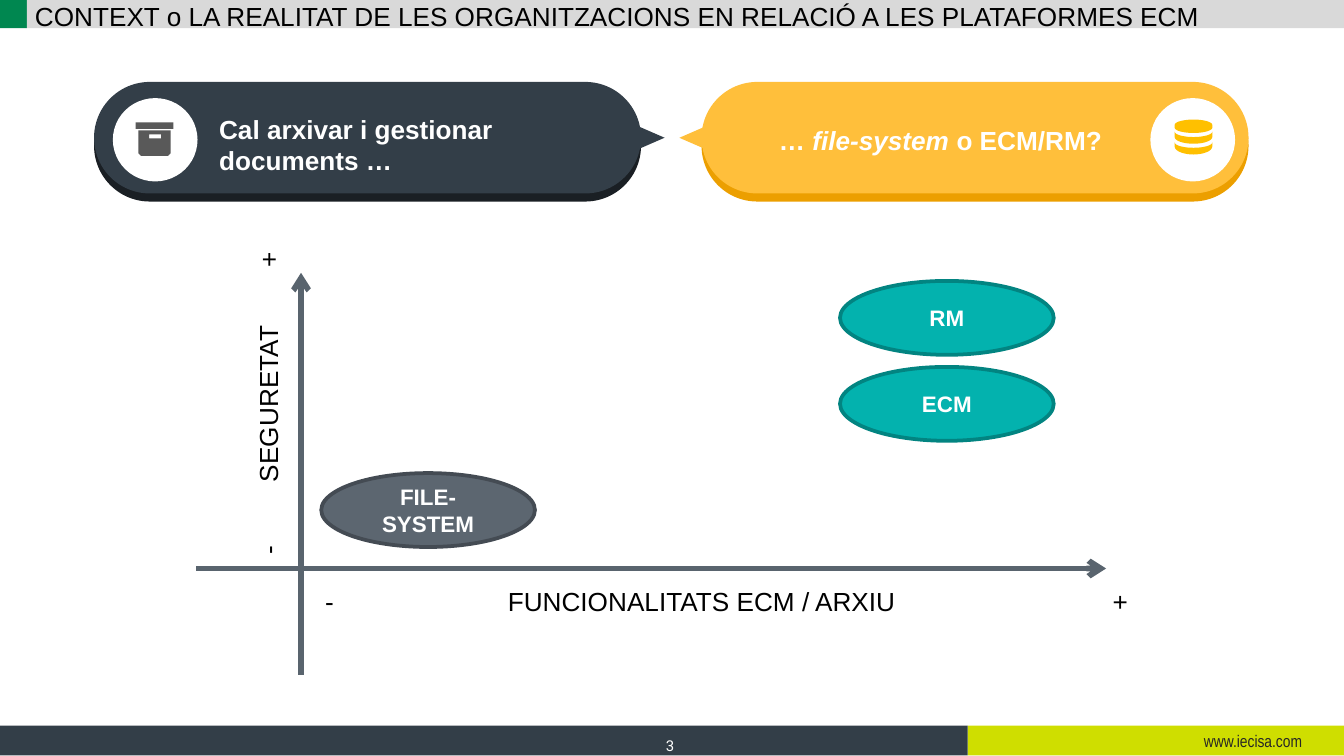
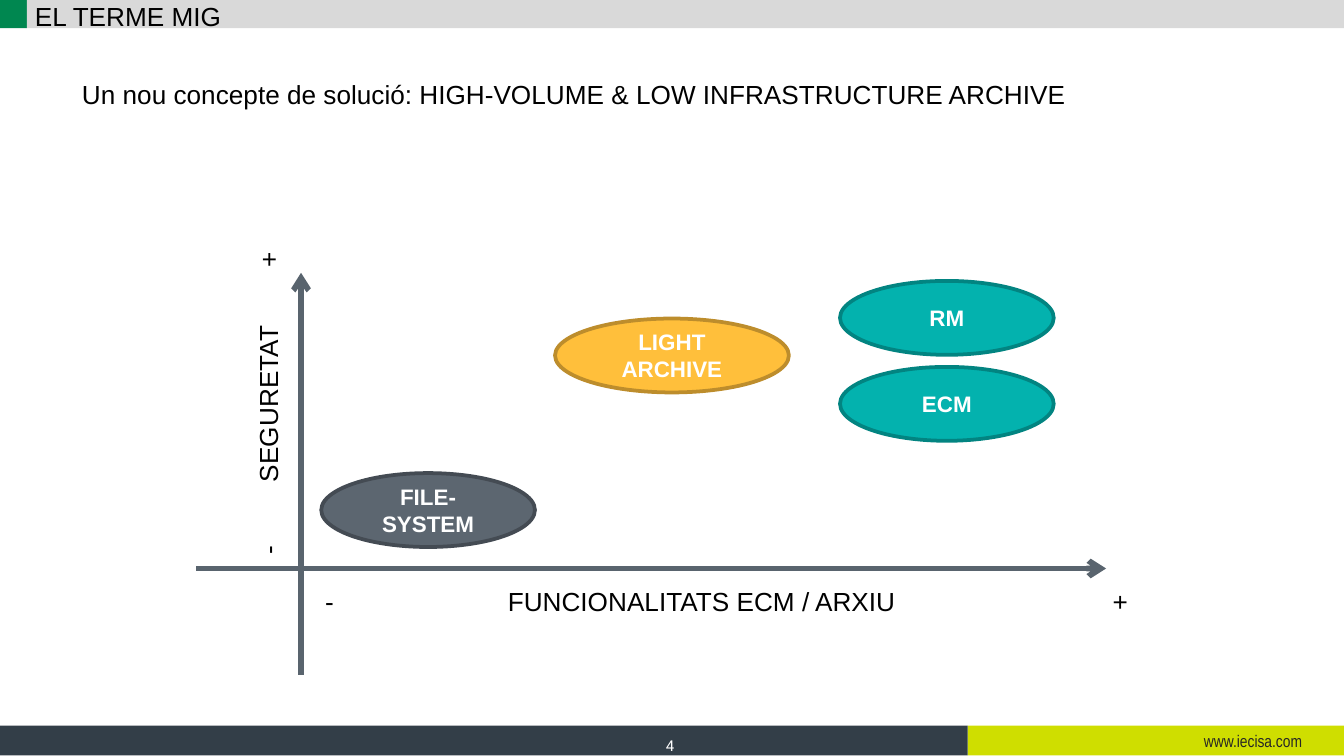
import math

from lxml import etree
from pptx import Presentation
from pptx.dml.color import RGBColor
from pptx.enum.shapes import MSO_CONNECTOR, MSO_SHAPE
from pptx.enum.text import MSO_ANCHOR, MSO_AUTO_SIZE, PP_ALIGN
from pptx.oxml.ns import qn
from pptx.util import Inches, Pt

RECTANGLE = MSO_SHAPE.RECTANGLE
ROUNDED = MSO_SHAPE.ROUNDED_RECTANGLE
ELLIPSE = MSO_SHAPE.OVAL
TRIANGLE = MSO_SHAPE.ISOSCELES_TRIANGLE
STRAIGHT = MSO_CONNECTOR.STRAIGHT
TOP, MIDDLE = MSO_ANCHOR.TOP, MSO_ANCHOR.MIDDLE
LEFT, CENTER, RIGHT = PP_ALIGN.LEFT, PP_ALIGN.CENTER, PP_ALIGN.RIGHT
NO_FIT = MSO_AUTO_SIZE.NONE

BLACK = RGBColor(0x00, 0x00, 0x00)
WHITE = RGBColor(0xFF, 0xFF, 0xFF)
LIME = RGBColor(0xCF, 0xDE, 0x00)
NAVY = RGBColor(0x33, 0x3E, 0x48)
NAVY_SHADE = RGBColor(0x1A, 0x1F, 0x24)
GREEN = RGBColor(0x00, 0x87, 0x50)
LIGHT_GRAY = RGBColor(0xD9, 0xD9, 0xD9)
INK = RGBColor(0x26, 0x26, 0x26)
AXIS_GRAY = RGBColor(0x59, 0x64, 0x6E)
SLATE = RGBColor(0x5C, 0x66, 0x70)
SLATE_EDGE = RGBColor(0x44, 0x4B, 0x53)
TEAL = RGBColor(0x03, 0xB2, 0xAE)
TEAL_EDGE = RGBColor(0x02, 0x84, 0x81)
AMBER = RGBColor(0xFF, 0xBF, 0x3B)
AMBER_EDGE = RGBColor(0xBD, 0x8D, 0x2C)
AMBER_SHADE = RGBColor(0xEC, 0x9F, 0x00)
ARCHIVE_GRAY = RGBColor(0x59, 0x59, 0x59)
DATABASE_GOLD = RGBColor(0xFF, 0xC0, 0x00)


def place(shape, left, top, width, height):
    shape.left, shape.top = Inches(left), Inches(top)
    shape.width, shape.height = Inches(width), Inches(height)


def write(shape, spans, size=14, color=BLACK, bold=False, align=LEFT,
          anchor=TOP, font="Arial", wrap=True, tabs=()):
    frame = shape.text_frame
    frame.auto_size = NO_FIT
    frame.word_wrap = wrap
    frame.vertical_anchor = anchor
    para = frame.paragraphs[0]
    para.alignment = align
    if tabs:
        stops = etree.SubElement(para._p.get_or_add_pPr(), qn("a:tabLst"))
        for position in tabs:
            etree.SubElement(stops, qn("a:tab"), pos=str(Inches(position)), algn="l")
    para.font.name = font
    para.font.size = Pt(size)
    para.font.bold = bold
    para.font.color.rgb = color
    for text, italic in spans if isinstance(spans, list) else [(spans, False)]:
        span = para.add_run()
        span.text = text
        if italic:
            span.font.italic = True
    return para


def add_text(page, bounds, spans, inset=True, **style):
    box = page.shapes.add_textbox(*map(Inches, bounds))
    if not inset:
        frame = box.text_frame
        frame.margin_left = frame.margin_right = 0
        frame.margin_top = frame.margin_bottom = 0
    write(box, spans, **style)
    return box


def paint(shape, fill, edge=None):
    shape.shadow.inherit = False
    shape.fill.solid()
    shape.fill.fore_color.rgb = fill
    if edge is None:
        shape.line.fill.background()
    else:
        shape.line.color.rgb = edge
        shape.line.width = Pt(2)


def add_block(page, kind, bounds, fill, edge=None):
    block = page.shapes.add_shape(kind, *map(Inches, bounds))
    paint(block, fill, edge)
    return block


def add_outline(page, contours, fill):
    builder = None
    for contour in contours:
        points = [(Inches(x), Inches(y)) for x, y in contour]
        if builder is None:
            builder = page.shapes.build_freeform(*points[0])
        else:
            builder.move_to(*points[0])
        builder.add_line_segments(points[1:], close=True)
    paint(builder.convert_to_shape(), fill)


def add_frame(page, master):
    parts = [
        add_block(page, RECTANGLE, (7.2, 5.4, 2.8, 0.22), LIME),
        add_block(page, RECTANGLE, (0, 5.4, 7.2, 0.22), NAVY),
        add_text(page, (8.86, 5.39, 0.95, 0.25), "www.iecisa.com",
                 size=9, color=INK, font="Arial Narrow", wrap=False),
        add_block(page, RECTANGLE, (0, 0, 0.2, 0.21), GREEN),
        add_block(page, RECTANGLE, (0.2, 0, 9.8, 0.21), LIGHT_GRAY),
    ]
    for number, part in enumerate(parts, 100):
        part.element.nvSpPr.cNvPr.id = number
        master.shapes.element.append(part.element)


def add_page(deck, layout, title, number):
    page = deck.slides.add_slide(deck.slide_layouts[layout])
    place(page.shapes.title, 0.16, -0.05, 9.64, 0.37)
    write(page.shapes.title, title)
    add_text(page, (3.82, 5.47, 2.33, 0.16), str(number), size=8, color=WHITE,
             align=CENTER, anchor=MIDDLE, font="Roboto")
    return page


def add_axis(page, start, end):
    axis = page.shapes.add_connector(STRAIGHT, *map(Inches, start + end))
    axis.line.color.rgb = AXIS_GRAY
    axis.line.width = Pt(3)
    properties = axis.element.spPr
    etree.SubElement(properties.find(qn("a:ln")), qn("a:tailEnd"), type="arrow")
    etree.SubElement(properties, qn("a:effectLst"))


def add_bubble(page, left, top, text, fill, edge, width=1.59):
    bubble = add_block(page, ELLIPSE, (left, top, width, 0.55), fill, edge)
    write(bubble, text, size=12, color=WHITE, bold=True, align=CENTER, anchor=MIDDLE)


def add_map(page):
    add_axis(page, (2.24, 5.02), (2.24, 2.03))
    add_axis(page, (1.46, 4.23), (8.23, 4.23))
    security = add_text(page, (0.58, 2.64, 2.83, 0.34), "-\tSEGURETAT\t+",
                        tabs=(0.54, 2.14))
    security.rotation = 270
    add_text(page, (2.32, 4.31, 6.69, 0.34), "-\tFUNCIONALITATS ECM / ARXIU\t+",
             tabs=(1.36, 5.86))
    add_bubble(page, 2.39, 3.52, "FILE-SYSTEM", SLATE, SLATE_EDGE)
    add_bubble(page, 6.25, 2.09, "RM", TEAL, TEAL_EDGE)
    add_bubble(page, 6.25, 2.73, "ECM", TEAL, TEAL_EDGE)


def add_callout(page, left, pointer_left, rotation, disc_left, fill, shade):
    for top, color in ((0.67, shade), (0.61, fill)):
        pill = add_block(page, ROUNDED, (left, top, 4.07, 0.83), color)
        pill.adjustments[0] = 0.5
    pointer = add_block(page, TRIANGLE, (pointer_left, 0.91, 0.2, 0.23), fill)
    pointer.rotation = rotation
    add_block(page, ELLIPSE, (disc_left, 0.73, 0.63, 0.62), WHITE)


def rectangle(left, top, right, bottom):
    return [(left, top), (right, top), (right, bottom), (left, bottom)]


def add_archive_icon(page):
    lid = rectangle(1.01, 0.91, 1.29, 0.96)
    body = [(1.03, 0.97), (1.27, 0.97), (1.27, 1.14), (1.25, 1.16),
            (1.05, 1.16), (1.03, 1.14)]
    handle = rectangle(1.11, 1.0, 1.2, 1.03)[::-1]
    add_outline(page, [lid, body, handle], ARCHIVE_GRAY)


def arc(edge, bulge, steps=20):
    angles = [math.pi * step / steps for step in range(steps + 1)]
    return [(8.88 - 0.14 * math.cos(angle), edge + bulge * math.sin(angle))
            for angle in angles]


def add_database_icon(page):
    layers = ((0.93, -0.04, 0.95, 0.04),
              (0.98, 0.04, 1.02, 0.05),
              (1.06, 0.04, 1.09, 0.06))
    contours = [arc(upper, rise) + arc(lower, drop)[::-1]
                for upper, rise, lower, drop in layers]
    add_outline(page, contours, DATABASE_GOLD)


def add_intro(page, text):
    body = page.placeholders[1]
    place(body, 0.51, 0.53, 8.98, 4.65)
    properties = body.text_frame.paragraphs[0]._p.get_or_add_pPr()
    properties.set("marL", "0")
    properties.set("indent", "0")
    etree.SubElement(properties, qn("a:buNone"))
    para = write(body, text)
    para.space_before = Pt(0)
    para.space_after = Pt(3)


def main():
    deck = Presentation()
    deck.slide_width = Inches(10)
    deck.slide_height = deck.slide_width * 9 // 16

    context = add_page(
        deck, 5,
        "CONTEXT o LA REALITAT DE LES ORGANITZACIONS EN RELACIÓ A LES PLATAFORMES ECM", 3)
    add_frame(context, deck.slide_master)
    add_map(context)
    add_callout(context, 0.7, 4.73, 90, 0.84, NAVY, NAVY_SHADE)
    add_archive_icon(context)
    add_text(context, (1.63, 0.84, 2.82, 0.47), "Cal arxivar i gestionar documents …",
             inset=False, color=WHITE, bold=True, anchor=MIDDLE)
    add_callout(context, 5.22, 5.07, 270, 8.56, AMBER, AMBER_SHADE)
    add_database_icon(context)
    add_text(context, (5.78, 0.92, 2.42, 0.24),
             [("… ", False), ("file-system ", True), ("o ECM/RM?", False)],
             inset=False, color=WHITE, bold=True, align=RIGHT, anchor=MIDDLE, wrap=False)

    middle_term = add_page(deck, 1, "EL TERME MIG", 4)
    add_intro(middle_term,
              "Un nou concepte de solució: HIGH-VOLUME & LOW INFRASTRUCTURE ARCHIVE")
    add_bubble(middle_term, 4.13, 2.37, "LIGHT ARCHIVE", AMBER, AMBER_EDGE, width=1.74)
    add_map(middle_term)

    deck.save("out.pptx")


if __name__ == "__main__":
    main()
